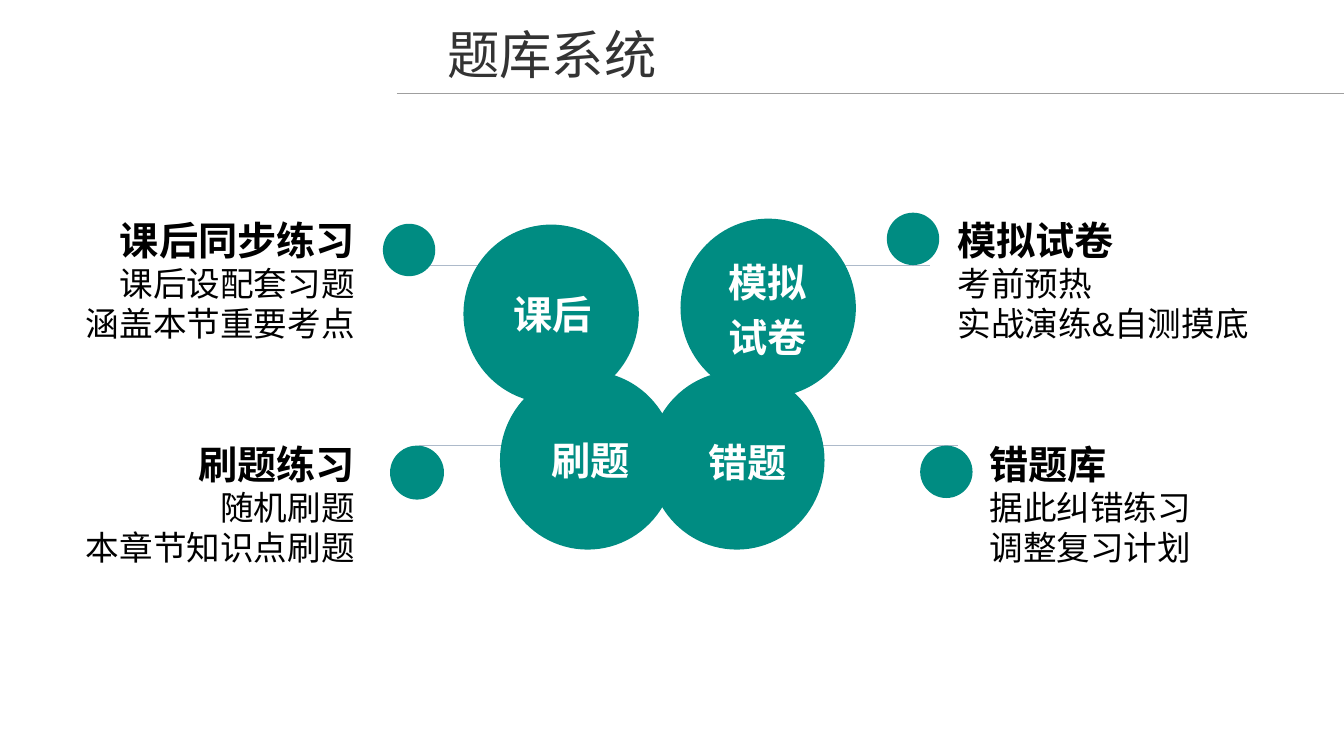
from dataclasses import dataclass

from lxml import etree
from pptx import Presentation
from pptx import util as u
from pptx.dml.color import RGBColor
from pptx.enum import shapes, text
from pptx.oxml.ns import qn

TEAL = RGBColor(0x00, 0x8C, 0x82)
BLACK = RGBColor(0x00, 0x00, 0x00)
WHITE = RGBColor(0xFF, 0xFF, 0xFF)
TITLE_GREY = RGBColor(0x33, 0x33, 0x33)
RULE_GREY = RGBColor(0x9F, 0x9F, 0x9F)
LEADER_GREY = RGBColor(0xAD, 0xBA, 0xCA)
LATIN_FONT = "Arial"
CJK_FONT = "Noto Sans CJK SC"
PETAL_WIDTH, PETAL_HEIGHT = 4.42, 4.5
CALLOUT_WIDTH, CALLOUT_HEIGHT = 9.32, 3.35


@dataclass
class Feature:
    """One petal at (left, top); every other place is an offset from it, in cm."""
    left: float
    top: float
    label: tuple
    label_centre: tuple
    label_size: tuple
    leader: tuple  # start x, end x, y
    dot: tuple
    dot_size: float
    callout: tuple
    heading: str
    details: tuple
    align: text.PP_ALIGN


LEFT, RIGHT = text.PP_ALIGN.LEFT, text.PP_ALIGN.RIGHT
FEATURES = [
    Feature(11.68, 5.66, ("课后",), (2.24, 2.2), (2.39, 1.19),
            (-0.94, 1.55, 1.02), (-2.03, -0.02), 1.32, (-12.06, -0.3),
            "课后同步练习", ("课后设配套习题", "涵盖本节重要考点"), RIGHT),
    Feature(16.36, 9.35, ("错题",), (2.49, 2.25), (2.39, 1.19),
            (4.29, 7.77, 1.88), (6.83, 1.88), 1.32, (8.58, 1.65),
            "错题库", ("据此纠错练习", "调整复习计划"), LEFT),
    Feature(12.6, 9.35, ("刷题",), (2.28, 2.19), (2.39, 1.19),
            (-2.03, 1.32, 1.88), (-2.77, 1.88), 1.36, (-12.98, 1.65),
            "刷题练习", ("随机刷题", "本章节知识点刷题"), RIGHT),
    Feature(17.15, 5.51, ("模拟", "试卷"), (2.19, 2.24), (3.02, 2.64),
            (3.81, 6.29, 1.17), (5.2, -0.15), 1.32, (6.98, -0.15),
            "模拟试卷", ("考前预热", "实战演练&自测摸底"), LEFT),
]


def set_frame(frame, anchor, inset_x=0, inset_y=0):
    frame.word_wrap = True
    frame.vertical_anchor = anchor
    frame.margin_left = frame.margin_right = u.Cm(inset_x)
    frame.margin_top = frame.margin_bottom = u.Cm(inset_y)


def write(frame, words, *, size, color, font=LATIN_FONT, bold=False,
          align=LEFT, line_height=None, before=0):
    """Fill the frame's empty first paragraph, or add one after it."""
    paragraph = frame.paragraphs[0]
    if paragraph.runs:
        paragraph = frame.add_paragraph()
        paragraph.space_before = u.Pt(before)
    paragraph.alignment = align
    if line_height:
        paragraph.line_spacing = u.Pt(line_height)
    run = paragraph.add_run()
    run.text = words
    run.font.size = u.Pt(size)
    run.font.bold = bold
    run.font.color.rgb = color
    run.font.name = font
    east_asian = etree.SubElement(run.font._element, qn("a:ea"))
    east_asian.set("typeface", CJK_FONT)


def add_teal(slide, preset, left, top, width, height):
    shape = slide.shapes.add_shape(
        preset, u.Cm(left), u.Cm(top), u.Cm(width), u.Cm(height))
    shape.shadow.inherit = False
    shape.fill.solid()
    shape.fill.fore_color.rgb = TEAL
    shape.line.fill.background()
    return shape


def add_rule(slide, start, end, y, color):
    rule = slide.shapes.add_connector(
        shapes.MSO_CONNECTOR.STRAIGHT, u.Cm(start), u.Cm(y), u.Cm(end), u.Cm(y))
    rule.line.color.rgb = color
    rule.line.width = u.Pt(0.5)
    etree.SubElement(rule._element.spPr, qn("a:effectLst"))


def add_heading(slide, left, top, width, height):
    title = slide.shapes.title
    title.left, title.top = u.Cm(left), u.Cm(top)
    title.width, title.height = u.Cm(width), u.Cm(height)
    set_frame(title.text_frame, text.MSO_ANCHOR.MIDDLE, 0.2, 0.1)
    write(title.text_frame, "题库系统", size=37.4, color=TITLE_GREY, font=CJK_FONT)
    add_rule(slide, left - 1.07, 33.87, top + 1.88, RULE_GREY)


def add_callout(slide, left, top, feature):
    callout = slide.shapes.add_textbox(
        u.Cm(left), u.Cm(top), u.Cm(CALLOUT_WIDTH), u.Cm(CALLOUT_HEIGHT))
    frame = callout.text_frame
    set_frame(frame, text.MSO_ANCHOR.TOP)
    write(frame, feature.heading, size=28, color=BLACK, bold=True,
          align=feature.align, line_height=36)
    for detail in feature.details:
        write(frame, detail, size=24, color=BLACK,
              align=feature.align, line_height=28.6)


def add_label(slide, centre_x, centre_y, feature):
    width, height = feature.label_size
    label = add_teal(slide, shapes.MSO_SHAPE.RECTANGLE,
                     centre_x - width / 2, centre_y - height / 2, width, height)
    set_frame(label.text_frame, text.MSO_ANCHOR.MIDDLE)
    for words in feature.label:
        write(label.text_frame, words, size=28, color=WHITE, bold=True,
              align=text.PP_ALIGN.CENTER, line_height=36, before=3.3)


def add_feature(slide, feature):
    left, top = feature.left, feature.top
    oval = shapes.MSO_SHAPE.OVAL
    start, end, y = feature.leader
    add_rule(slide, left + start, left + end, top + y, LEADER_GREY)
    add_teal(slide, oval, left, top, PETAL_WIDTH, PETAL_HEIGHT)
    add_teal(slide, oval, left + feature.dot[0], top + feature.dot[1],
             feature.dot_size, feature.dot_size)
    add_label(slide, left + feature.label_centre[0],
              top + feature.label_centre[1], feature)
    add_callout(slide, left + feature.callout[0], top + feature.callout[1], feature)


def main():
    deck = Presentation()
    deck.slide_width, deck.slide_height = u.Cm(33.87), u.Cm(19.05)
    slide = deck.slides.add_slide(deck.slide_layouts[5])
    add_heading(slide, 11.07, 0.46, 14.73, 1.8)
    for feature in FEATURES:
        add_feature(slide, feature)
    deck.save("out.pptx")


if __name__ == "__main__":
    main()
